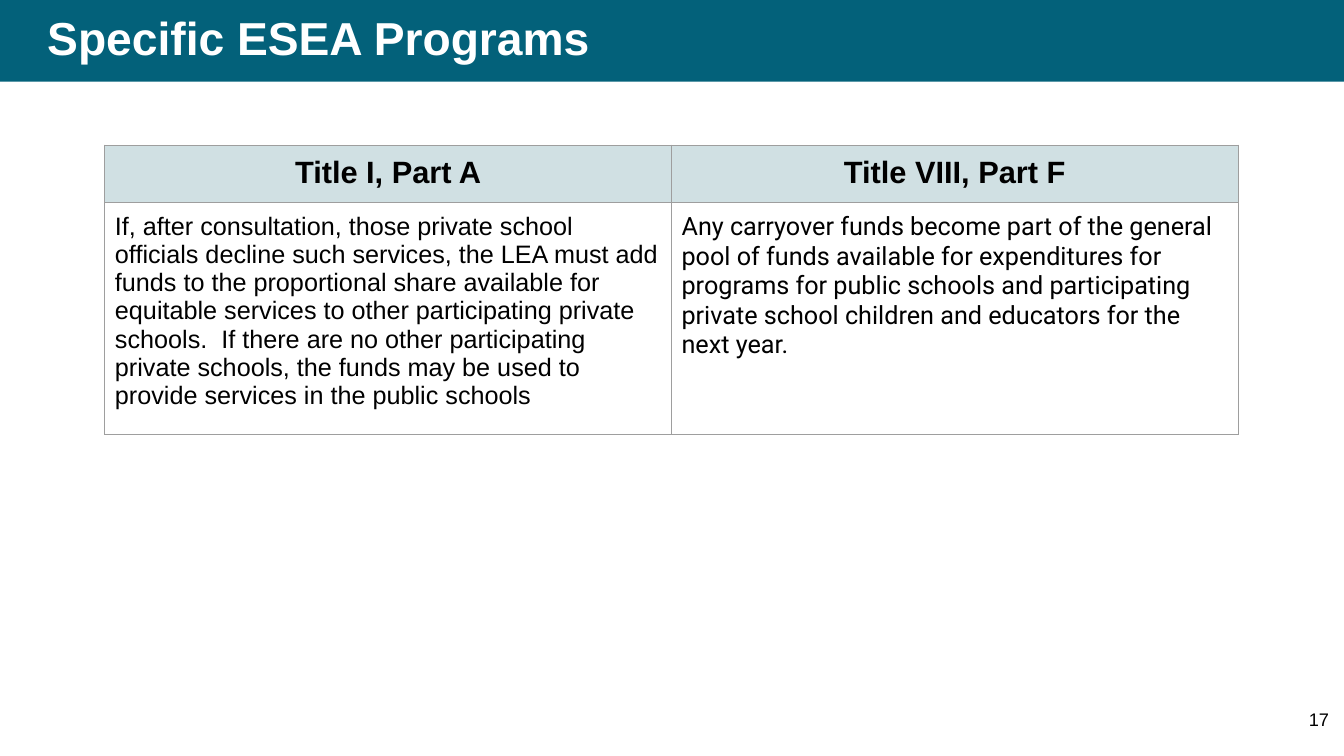
from dataclasses import dataclass

from lxml.etree import SubElement
from pptx import Presentation
from pptx.dml.color import RGBColor as Rgb
from pptx.enum.shapes import MSO_SHAPE as Preset
from pptx.enum.text import MSO_ANCHOR as Anchor, PP_ALIGN as Align
from pptx.oxml.ns import qn
from pptx.util import Inches, Pt


@dataclass(frozen=True)
class Theme:
    banner: str = "03617A"
    header: str = "D0E0E3"
    border: str = "9E9E9E"
    light: str = "FFFFFF"
    dark: str = "000000"
    font: str = "Arial"
    alt_font: str = "Roboto"
    title_size: float = 33
    header_size: float = 22
    body_size: float = 18
    number_size: float = 13
    border_width: float = 0.75


class SlideBuilder:
    def __init__(self, slide, theme):
        self.shapes = slide.shapes
        self.theme = theme

    def set_text(self, frame, text, size, color, font=None, bold=False,
                 align=Align.LEFT, spacing=None):
        """Fill the first paragraph of a text frame."""
        line = frame.paragraphs[0]
        line.text = text
        line.alignment = align
        line.line_spacing = spacing
        line.font.name = font or self.theme.font
        line.font.size = Pt(size)
        line.font.bold = bold
        line.font.color.rgb = Rgb.from_string(color)

    def band(self, left, top, width, height, color):
        band = self.shapes.add_shape(Preset.RECTANGLE, Inches(left), Inches(top),
                                     Inches(width), Inches(height))
        band.shadow.inherit = False
        band.fill.solid()
        band.fill.fore_color.rgb = Rgb.from_string(color)
        band.line.fill.background()

    def label(self, left, top, width, height, text, size, color,
              inset=0.1, anchor=Anchor.TOP, **style):
        box = self.shapes.add_textbox(Inches(left), Inches(top),
                                      Inches(width), Inches(height))
        frame = box.text_frame
        frame.word_wrap = True
        frame.vertical_anchor = anchor
        frame.margin_left = frame.margin_right = Inches(0.1)
        frame.margin_top = frame.margin_bottom = Inches(inset)
        self.set_text(frame, text, size, color, **style)

    def outline(self, cell):
        """Draw all four borders; they must come before the cell's fill."""
        properties = cell._tc.get_or_add_tcPr()
        for side in ("a:lnL", "a:lnR", "a:lnT", "a:lnB"):
            edge = SubElement(properties, qn(side), w=str(Pt(self.theme.border_width)))
            fill = SubElement(edge, qn("a:solidFill"))
            SubElement(fill, qn("a:srgbClr"), val=self.theme.border)

    def comparison(self, left, top, col_width, row_heights, columns):
        """Each column is (heading, body text, body font)."""
        theme = self.theme
        table = self.shapes.add_table(
            len(row_heights), len(columns), Inches(left), Inches(top),
            Inches(col_width * len(columns)), Inches(sum(row_heights))).table
        table.horz_banding = False
        for row, height in zip(table.rows, row_heights):
            row.height = Inches(height)
        for index, (heading, body, body_font) in enumerate(columns):
            table.columns[index].width = Inches(col_width)
            head_cell, body_cell = table.cell(0, index), table.cell(1, index)
            for cell in (head_cell, body_cell):
                cell.margin_left = cell.margin_right = Inches(0.1)
                cell.margin_top = cell.margin_bottom = Inches(0.1)
                self.outline(cell)
            head_cell.fill.solid()
            head_cell.fill.fore_color.rgb = Rgb.from_string(theme.header)
            body_cell.fill.background()
            self.set_text(head_cell.text_frame, heading, theme.header_size,
                          theme.dark, bold=True, align=Align.CENTER)
            self.set_text(body_cell.text_frame, body, theme.body_size,
                          theme.dark, font=body_font)


def main():
    deck = Presentation()
    deck.slide_width, deck.slide_height = Inches(13.33), Inches(7.5)
    theme = Theme()
    page = SlideBuilder(deck.slides.add_slide(deck.slide_layouts[6]), theme)

    # Title banner
    page.band(0, 0, 13.33, 0.81, theme.banner)
    page.label(0.37, 0, 12.32, 0.81, "Specific ESEA Programs", theme.title_size,
               theme.light, inset=0.05, anchor=Anchor.MIDDLE, bold=True, spacing=0.9)

    # Comparison of the two programs
    page.comparison(1.04, 1.44, 5.62, (0.54, 2.16), [
        ("Title I, Part A",
         "If, after consultation, those private school officials decline such "
         "services, the LEA must add funds to the proportional share available for "
         "equitable services to other participating private schools.  If there are "
         "no other participating private schools, the funds may be used to provide "
         "services in the public schools",
         theme.font),
        ("Title VIII, Part F",
         "Any carryover funds become part of the general pool of funds available "
         "for expenditures for programs for public schools and participating "
         "private school children and educators for the next year.",
         theme.alt_font),
    ])

    # Page number
    page.label(12.48, 6.93, 0.8, 0.57, "17", theme.number_size, theme.dark,
               align=Align.RIGHT)

    deck.save("out.pptx")


if __name__ == "__main__":
    main()
